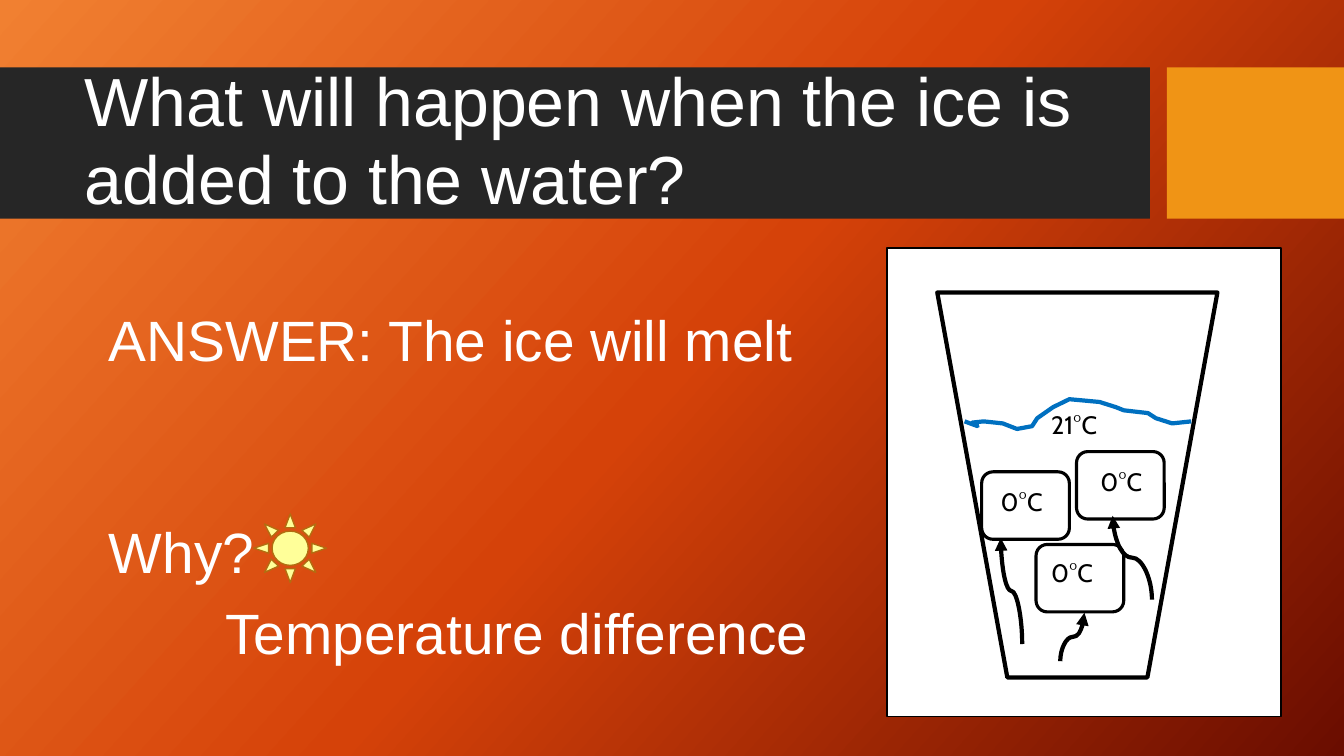
"""Build a slide on what happens when ice is added to water."""
from copy import deepcopy
from lxml.etree import SubElement as Sub
from pptx import Presentation
from pptx.dml.color import RGBColor as Rgb
from pptx.enum.shapes import MSO_CONNECTOR as Link, MSO_SHAPE as Kind
from pptx.enum.text import MSO_ANCHOR as Anchor, PP_ALIGN as Align
from pptx.oxml.ns import qn
from pptx.util import Cm, Pt

HUES = {
    "light": "F18031", "mid": "D54209", "deep": "6A0D00",
    "bar": "262626", "gold": "F09415", "white": "FFFFFF", "black": "000000",
    "water": "0070C0", "sun": "FFFF99", "ray": "B26D10",
}


def paint(shape, fill=None, line=None, width=1):
    """Set fill and line, and drop the shadow."""
    shape.shadow.inherit = False
    if fill:
        shape.fill.solid()
        shape.fill.fore_color.rgb = Rgb.from_string(HUES[fill])
    else:
        shape.fill.background()
    if line:
        shape.line.color.rgb = Rgb.from_string(HUES[line])
        shape.line.width = Pt(width)
    else:
        shape.line.fill.background()


def style(para, face, size, hue):
    """Format every run of a paragraph."""
    for run in para.runs:
        run.font.name = face
        run.font.size = Pt(size)
        run.font.color.rgb = Rgb.from_string(HUES[hue])


deck = Presentation()
deck.slide_width, deck.slide_height = Cm(33.87), Cm(19.05)
slide = deck.slides.add_slide(deck.slide_layouts[1])
shapes = slide.shapes

back = slide.background.fill
back.gradient()
back.gradient_angle = 318
stops = slide._element.find(".//" + qn("a:gsLst"))
stops.append(deepcopy(stops[0]))
for stop, hue, pos in zip(back.gradient_stops, ("light", "mid", "deep"), (0, 0.5, 1)):
    stop.color.rgb = Rgb.from_string(HUES[hue])
    stop.position = pos

for left, wide, hue in ((0, 28.98, "bar"), (29.41, 4.46, "gold")):
    bar = shapes.add_shape(Kind.RECTANGLE, Cm(left), Cm(1.7), Cm(wide), Cm(3.81))
    paint(bar, hue)

group = shapes.add_group_shape().shapes
card = group.add_shape(Kind.RECTANGLE, Cm(22.35), Cm(6.25), Cm(9.93), Cm(11.81))
paint(card, "white", "black")
cup = group.add_shape(Kind.TRAPEZOID, Cm(23.62), Cm(7.37), Cm(7.06), Cm(9.7))
cup.rotation = 180
paint(cup, None, "black", 3)

crest = [
    (24.31, 10.62), (24.64, 10.74), (24.5, 10.65), (24.79, 10.62), (25.27, 10.67),
    (25.63, 10.81), (26.01, 10.74), (26.14, 10.54), (26.54, 10.26), (26.95, 10.06),
    (27.71, 10.13), (28.12, 10.26), (28.32, 10.34), (28.93, 10.41), (29.13, 10.54),
    (29.54, 10.67), (30.02, 10.62),
]
dots = [(Cm(x), Cm(y)) for x, y in crest]
pen = group.build_freeform(*dots[0])
pen.add_line_segments(dots[1:], close=False)
paint(pen.convert_to_shape(), None, "water", 3)

for left, top in ((24.74, 11.89), (27.13, 11.38), (26.11, 13.72)):
    cube = group.add_shape(Kind.ROUNDED_RECTANGLE, Cm(left), Cm(top), Cm(2.21), Cm(1.7))
    paint(cube, None, "black", 2.25)

labels = [
    ("21°C", 26.24, 10.19, 2.18), ("0°C", 24.97, 12.12, 1.65),
    ("0°C", 27.48, 11.63, 1.7), ("0°C", 26.24, 13.92, 1.88),
]
for text, left, top, wide in labels:
    frame = group.add_textbox(Cm(left), Cm(top), Cm(wide), Cm(1.02)).text_frame
    frame.word_wrap = True
    frame.text = text
    style(frame.paragraphs[0], "Cabin", 18, "black")

title, body = shapes.title, slide.placeholders[1]
spots = ((title, 1.88, 2.08, 26.7, 3), (body, 2.49, 7.87, 18.54, 10.19))
for holder, left, top, wide, high in spots:
    holder.left, holder.top = Cm(left), Cm(top)
    holder.width, holder.height = Cm(wide), Cm(high)
    shapes._spTree.append(holder._element)

title.text_frame.text = "What will happen when the ice is added to the water?"
title.text_frame.vertical_anchor = Anchor.MIDDLE
head = title.text_frame.paragraphs[0]
head.alignment = Align.LEFT
head.line_spacing = 0.95
style(head, "Arial", 48.6, "white")

frame = body.text_frame
frame.vertical_anchor = Anchor.TOP
frame.margin_top = Cm(0.28)
lines = [
    ("ANSWER: The ice will melt", 0, 0.7, 0, Align.LEFT),
    ("Why?", 0, 0.7, 111, Align.LEFT),
    ("Temperature difference", 2.54, 1, 5, Align.CENTER),
]
for i, (text, inset, pitch, gap, side) in enumerate(lines):
    para = frame.add_paragraph() if i else frame.paragraphs[0]
    para.text = text
    props = para._p.get_or_add_pPr()
    props.set("marL", str(Cm(inset)))
    props.set("indent", "0")
    Sub(props, qn("a:buNone"))
    para.alignment = side
    para.line_spacing = pitch
    para.space_before, para.space_after = Pt(gap), Pt(6)
    style(para, "Arial", 40.6, "white")

flows = [
    (25.76, 16.23, 25.22, 13.56),
    (26.72, 16.66, 27.33, 15.44),
    (29.03, 15.11, 28.04, 13),
]
for x1, y1, x2, y2 in flows:
    midx, midy = (x1 + x2) / 2, (y1 + y2) / 2
    half, lean = (y1 - y2) / 2, (x1 - x2) / 2
    flow = shapes.add_connector(
        Link.CURVE, Cm(midx - half), Cm(midy + lean), Cm(midx + half), Cm(midy - lean))
    flow.line.color.rgb = Rgb.from_string(HUES["black"])
    flow.line.width = Pt(3)
    props = flow._element.spPr
    props.find(qn("a:xfrm")).set("rot", str(270 * 60000))
    Sub(props.find(qn("a:ln")), qn("a:tailEnd"), type="triangle")
    Sub(props, qn("a:effectLst"))

sun = shapes.add_shape(Kind.SUN, Cm(6.4), Cm(12.95), Cm(1.83), Cm(1.73))
paint(sun, "sun", "ray")

deck.save("out.pptx")
